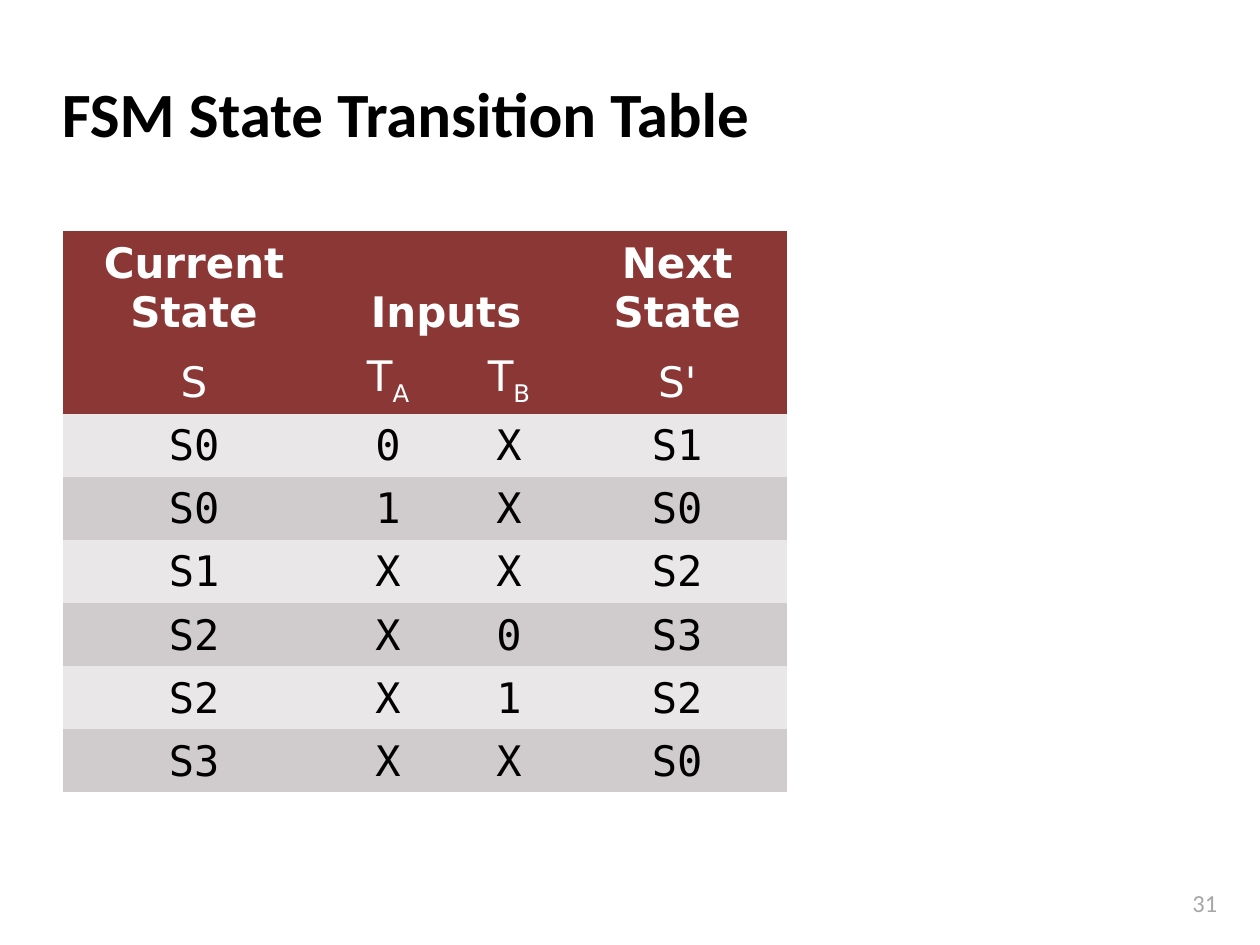
import pptx
import pptx.dml.color
import pptx.enum.text
import pptx.oxml.ns
import pptx.util
from lxml import etree

Inches = pptx.util.Inches
ALIGN = pptx.enum.text.PP_ALIGN
ANCHOR = pptx.enum.text.MSO_ANCHOR
qn = pptx.oxml.ns.qn

TITLE = "FSM State Transition Table"
PAGE_NUMBER = "31"
# A tuple holds a symbol and its subscript.
HEADINGS = [
    ["Current State", "Inputs", "", "Next State"],
    ["S", ("T", "A"), ("T", "B"), "S'"],
]
TRANSITIONS = [
    ["S0", "0", "X", "S1"],
    ["S0", "1", "X", "S0"],
    ["S1", "X", "X", "S2"],
    ["S2", "X", "0", "S3"],
    ["S2", "X", "1", "S2"],
    ["S3", "X", "X", "S0"],
]
COLUMN_WIDTHS = [2.08, 1, 0.92, 1.75]
ROW_HEIGHTS = [0.27, 0.34] + [0.5, 0.5, 0.42] * 2
TITLE_BOX = (0.39, 0.48, 8.3, 0.83)
TABLE_BOX = (0.5, 1.83, 5.75, 4.01)
NUMBER_BOX = (9, 7, 0.76, 0.34)

THEME = {
    "title": {"name": "Calibri", "size": 36, "bold": True, "color": "000000"},
    "number": {"name": "Calibri", "size": 14, "bold": False, "color": "A6A6A6"},
    "heading": {"name": "DejaVu Sans", "size": 24, "bold": True, "color": "FFFFFF"},
    "symbol": {"name": "DejaVu Sans", "size": 24, "bold": False, "color": "FFFFFF"},
    "value": {"name": "DejaVu Sans Mono", "size": 24, "bold": False, "color": "000000"},
    "heading_fill": "8B3735",
    "band_fills": ["E9E7E8", "D0CCCD"],
    "plain_table_style": "{2D5ABB26-0587-4C30-8999-92F81FD0307C}",
}


def rgb(value):
    return pptx.dml.color.RGBColor.from_string(value)


def add_run(paragraph, text, style):
    run = paragraph.add_run()
    run.text = text
    formats = {"name": style["name"], "size": pptx.util.Pt(style["size"]), "bold": style["bold"]}
    for attribute, value in formats.items():
        setattr(run.font, attribute, value)
    run.font.color.rgb = rgb(style["color"])
    return run


def place(shape, box):
    for attribute, value in zip(("left", "top", "width", "height"), box):
        setattr(shape, attribute, Inches(value))


def add_title(slide):
    title = slide.shapes.title
    place(title, TITLE_BOX)
    title.text_frame.vertical_anchor = ANCHOR.MIDDLE
    paragraph = title.text_frame.paragraphs[0]
    paragraph.alignment = ALIGN.LEFT
    properties = paragraph._p.get_or_add_pPr()
    properties.set("marL", str(Inches(0.13)))
    properties.set("indent", str(Inches(-0.13)))
    add_run(paragraph, TITLE, THEME["title"])


def add_page_number(slide):
    box = slide.shapes.add_textbox(*map(Inches, NUMBER_BOX))
    box.text_frame.word_wrap = True
    paragraph = box.text_frame.paragraphs[0]
    paragraph.alignment = ALIGN.RIGHT
    add_run(paragraph, PAGE_NUMBER, THEME["number"])


def fill_cell(cell, content, style, fill):
    cell.fill.solid()
    cell.fill.fore_color.rgb = rgb(fill)
    cell.vertical_anchor = ANCHOR.BOTTOM
    paragraph = cell.text_frame.paragraphs[0]
    paragraph.alignment = ALIGN.CENTER
    space_before = etree.SubElement(paragraph._p.get_or_add_pPr(), qn("a:spcBef"))
    etree.SubElement(space_before, qn("a:spcPct")).set("val", "20000")
    if isinstance(content, tuple):
        symbol, subscript = content
        add_run(paragraph, symbol, style)
        run = add_run(paragraph, subscript, style)
        run.font._element.set("baseline", "-25000")
    elif content:
        add_run(paragraph, content, style)


def add_transition_table(slide):
    rows = HEADINGS + TRANSITIONS
    frame = slide.shapes.add_table(len(rows), len(COLUMN_WIDTHS), *map(Inches, TABLE_BOX))
    table = frame.table
    table.horz_banding = False
    table._tbl.tblPr.find(qn("a:tableStyleId")).text = THEME["plain_table_style"]
    for column, width in zip(table.columns, COLUMN_WIDTHS):
        column.width = Inches(width)
    for row, height in zip(table.rows, ROW_HEIGHTS):
        row.height = Inches(height)
    place(frame, TABLE_BOX)
    table.cell(0, 1).merge(table.cell(0, 2))

    styles = ["heading", "symbol"] + ["value"] * len(TRANSITIONS)
    for index, (contents, style) in enumerate(zip(rows, styles)):
        if index < len(HEADINGS):
            fill = THEME["heading_fill"]
        else:
            fill = THEME["band_fills"][(index - len(HEADINGS)) % 2]
        for column, content in enumerate(contents):
            fill_cell(table.cell(index, column), content, THEME[style], fill)


def main():
    presentation = pptx.Presentation()
    presentation.slide_width = Inches(10)
    presentation.slide_height = Inches(7.5)
    slide = presentation.slides.add_slide(presentation.slide_layouts[5])
    add_page_number(slide)
    add_title(slide)
    add_transition_table(slide)
    presentation.save("out.pptx")


if __name__ == "__main__":
    main()
